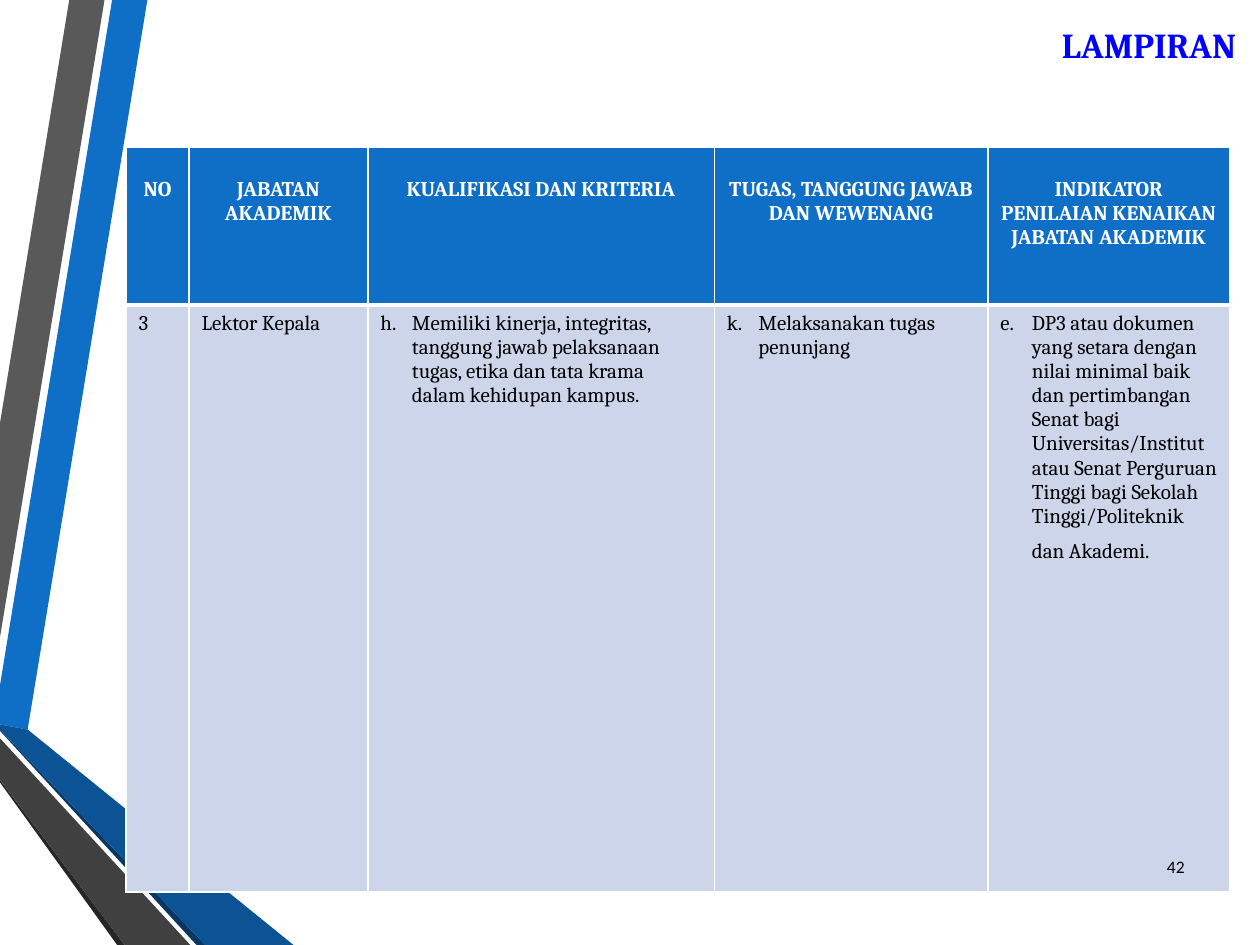
from lxml.etree import SubElement
from pptx import Presentation
from pptx.dml.color import RGBColor
from pptx.enum.text import MSO_ANCHOR as Anchor, PP_ALIGN as Align
from pptx.oxml import parse_xml
from pptx.oxml.ns import nsdecls, qn
from pptx.util import Inches, Pt

RIBBONS = [
    ("0F6FC6", [(0, 5.44), (0, 5.75), (0.22, 5.79), (1.17, 0), (0.89, 0)]),
    ("595959", [(0.83, 0), (0.55, 0), (0, 3.36), (0, 5.06)]),
    ("262626", [(0, 6.19), (0, 6.21), (0.93, 7.5), (0.99, 7.5)]),
    ("083763", [(0, 5.79), (0, 5.8), (1.56, 7.5), (1.63, 7.5)]),
    ("0B5394", [(0, 5.79), (1.63, 7.5), (2.33, 7.5), (0.22, 5.79), (0, 5.75)]),
    ("404040", [(0, 6.19), (0.99, 7.5), (1.51, 7.5), (0, 5.86)]),
]
COLUMNS = [
    (0.5, "NO", "3", None),
    (1.42, "JABATAN AKADEMIK", "Lektor Kepala", None),
    (2.75, "KUALIFIKASI DAN KRITERIA",
     "Memiliki kinerja, integritas, tanggung jawab pelaksanaan tugas, "
     "etika dan tata krama dalam kehidupan kampus.", 8),
    (2.17, "TUGAS, TANGGUNG JAWAB DAN WEWENANG", "Melaksanakan tugas penunjang", 11),
    (1.92, "INDIKATOR PENILAIAN KENAIKAN JABATAN AKADEMIK",
     "DP3 atau dokumen yang setara dengan nilai minimal baik dan pertimbangan "
     "Senat bagi Universitas/Institut atau Senat Perguruan Tinggi bagi Sekolah "
     "Tinggi/Politeknik dan Akademi.", 5),
]
ROW_HEIGHTS = [1.25, 4.66]
HEAD = {"name": "Cambria", "size": Pt(12), "bold": True}
BODY = HEAD | {"bold": False}
TITLE = HEAD | {"size": Pt(20)}
NUMBER = {"name": "Calibri", "size": Pt(10), "bold": False}
TALL_SPACE = {"name": "Calibri", "size": Pt(18), "bold": False}


def color(value):
    return RGBColor.from_string(value)


def paint(target, value):
    target.fill.solid()
    target.fill.fore_color.rgb = color(value)


def write(para, text, style, ink, align=Align.LEFT):
    para.alignment = align
    span = para.add_run()
    span.text = text
    for key, value in style.items():
        setattr(span.font, key, value)
    span.font.color.rgb = color(ink)


def add_ribbon(page, fill, points):
    start, *rest = [(Inches(x), Inches(y)) for x, y in points]
    builder = page.shapes.build_freeform(*start)
    builder.add_line_segments(rest, close=True)
    ribbon = builder.convert_to_shape()
    ribbon.shadow.inherit = False
    ribbon.line.fill.background()
    paint(ribbon, fill)


def set_borders(cell, widths):
    properties = cell._tc.get_or_add_tcPr()
    for place, (side, width) in enumerate(widths.items()):
        properties.insert(place, parse_xml(
            f'<a:ln{side} {nsdecls("a")} w="{Pt(width)}"><a:solidFill>'
            f'<a:srgbClr val="FFFFFF"/></a:solidFill></a:ln{side}>'))


def number_para(para, start):
    properties = para._p.get_or_add_pPr()
    properties.set("marL", str(Inches(0.25)))
    properties.set("indent", str(Inches(-0.25)))
    SubElement(properties, qn("a:buAutoNum"), type="alphaLcPeriod", startAt=str(start))


def add_table(page):
    width = sum(column[0] for column in COLUMNS)
    table = page.shapes.add_table(
        2, len(COLUMNS), Inches(1), Inches(1.17),
        Inches(width), Inches(sum(ROW_HEIGHTS))).table
    for row, height in zip(table.rows, ROW_HEIGHTS):
        row.height = Inches(height)
    for index, (width, heading, content, start) in enumerate(COLUMNS):
        table.columns[index].width = Inches(width)
        head, body = table.cell(0, index), table.cell(1, index)
        head.margin_top = Inches(0.24)
        paint(head, "0F6FC6")
        paint(body, "CCD5EA")
        set_borders(head, {"L": 1, "R": 1, "T": 1, "B": 3})
        set_borders(body, {"L": 1, "R": 1, "T": 3, "B": 1})
        write(head.text_frame.paragraphs[0], heading, HEAD, "FFFFFF", Align.CENTER)
        write(body.text_frame.paragraphs[0], content, BODY, "000000")
        if start:
            number_para(body.text_frame.paragraphs[0], start)
    write(body.text_frame.paragraphs[0], " ", TALL_SPACE, "000000")


def add_label(page, area, text, style, ink, anchor):
    box = page.shapes.add_textbox(*map(Inches, area))
    box.text_frame.word_wrap = True
    box.text_frame.vertical_anchor = anchor
    write(box.text_frame.paragraphs[0], text, style, ink, Align.RIGHT)


def main():
    deck = Presentation()
    deck.slide_width, deck.slide_height = Inches(10), Inches(7.5)
    page = deck.slides.add_slide(deck.slide_layouts[6])
    for fill, points in RIBBONS:
        add_ribbon(page, fill, points)
    add_table(page)
    add_label(page, (9.03, 6.68, 0.47, 0.4), "42", NUMBER, "000000", Anchor.MIDDLE)
    add_label(page, (2.58, 0.14, 7.33, 0.44), "LAMPIRAN", TITLE, "0000FF", Anchor.TOP)
    deck.save("out.pptx")


if __name__ == "__main__":
    main()
